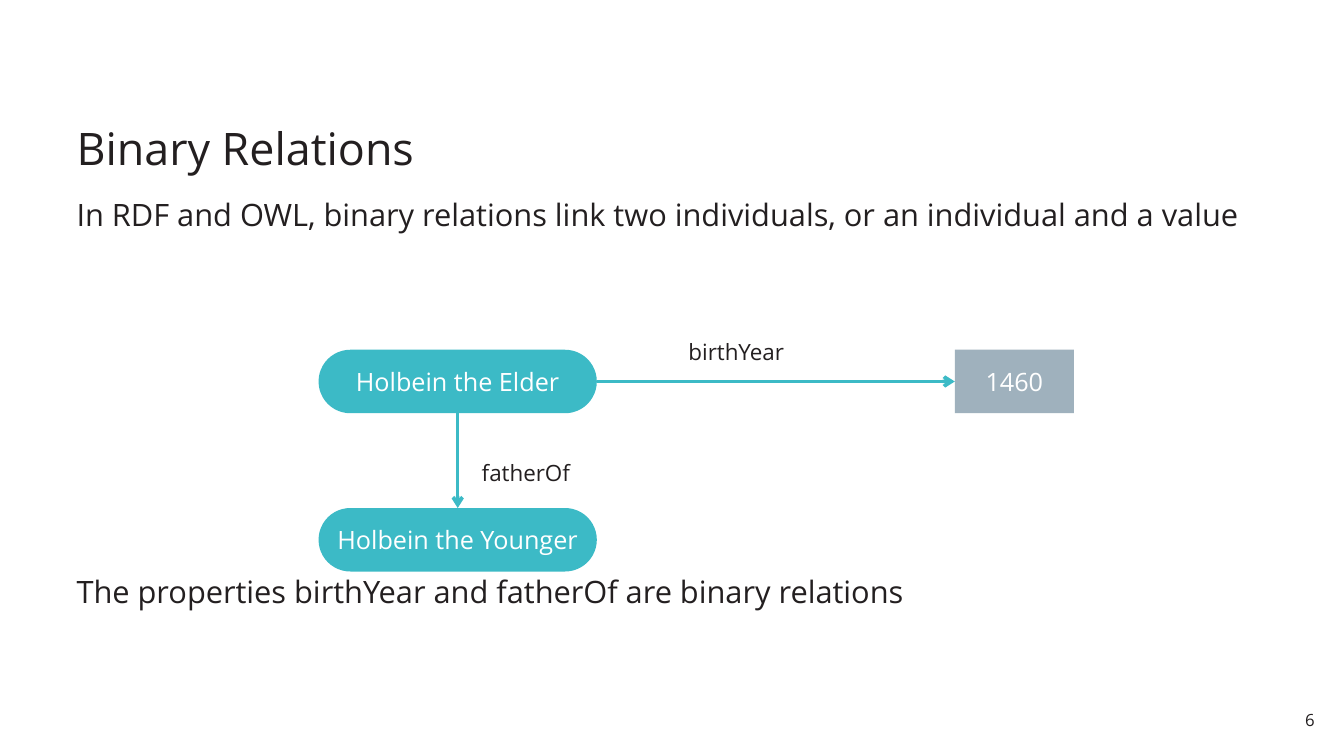
from pptx import Presentation
from pptx.dml.color import RGBColor
from pptx.enum.shapes import MSO_CONNECTOR as Line, MSO_SHAPE as Shape
from pptx.enum.text import MSO_ANCHOR as Anchor, MSO_AUTO_SIZE as Fit, PP_ALIGN as Align
from pptx.oxml.ns import qn
from pptx.util import Inches, Pt
from lxml.etree import SubElement

INK = RGBColor(0x23, 0x1F, 0x20)
TEAL = RGBColor(0x3C, 0xBA, 0xC6)
GRAY = RGBColor(0x9F, 0xB1, 0xBD)
WHITE = RGBColor(0xFF, 0xFF, 0xFF)
FONT = "Open Sans"

LEFT, WIDE = 0.68, 11.97
PROSE = [
    ("Binary Relations", 0.76, 1.02, 32, Anchor.BOTTOM),
    ("In RDF and OWL, binary relations link two individuals, or an individual and a value",
     1.94, 0.5, 22, Anchor.TOP),
    ("The properties birthYear and fatherOf are binary relations",
     5.68, 0.5, 22, Anchor.TOP),
]
HIGH = 0.63
NODES = {
    "elder": ("Holbein the Elder", Shape.ROUNDED_RECTANGLE, 3.16, 3.47, 2.76, TEAL),
    "younger": ("Holbein the Younger", Shape.ROUNDED_RECTANGLE, 3.16, 5.04, 2.76, TEAL),
    "year": ("1460", Shape.RECTANGLE, 9.47, 3.47, 1.18, GRAY),
}
LINKS = [("elder", 2, "younger", 0), ("elder", 3, "year", 1)]
LABELS = [("birthYear", 6.73, 3.31, 1.2), ("fatherOf", 4.68, 4.51, 1.1)]
NUMBER = ("6", 12.65, 6.98, 0.47, 0.31)


def write(shape, text, size, color, align=Align.LEFT, anchor=Anchor.TOP, wrap=True):
    frame = shape.text_frame
    frame.text = text
    frame.word_wrap = wrap
    frame.vertical_anchor = anchor
    par = frame.paragraphs[0]
    par.alignment = align
    font = par.runs[0].font
    font.name, font.size = FONT, Pt(size)
    font.color.rgb = color
    return frame


def add_box(slide, *place):
    return slide.shapes.add_textbox(*map(Inches, place))


def pad(frame, side, edge):
    frame.margin_left = frame.margin_right = Inches(side)
    frame.margin_top = frame.margin_bottom = Inches(edge)


def add_node(slide, text, kind, left, top, wide, fill):
    node = slide.shapes.add_shape(kind, *map(Inches, (left, top, wide, HIGH)))
    if kind == Shape.ROUNDED_RECTANGLE:
        node.adjustments[0] = 0.5
    node.shadow.inherit = False
    node.fill.solid()
    node.fill.fore_color.rgb = fill
    node.line.fill.background()
    write(node, text, 18, WHITE, Align.CENTER, Anchor.MIDDLE, False)
    return node


def add_link(slide, start, out, end, into):
    link = slide.shapes.add_connector(Line.STRAIGHT, 0, 0, 0, 0)
    link.begin_connect(start, out)
    link.end_connect(end, into)
    link.line.color.rgb = TEAL
    link.line.width = Pt(2.5)
    SubElement(link.line._get_or_add_ln(), qn("a:tailEnd"), type="arrow")
    SubElement(link._element.spPr, qn("a:effectLst"))


def main():
    deck = Presentation()
    deck.slide_width, deck.slide_height = Inches(13.33), Inches(7.5)
    slide = deck.slides.add_slide(deck.slide_layouts[6])

    for text, top, high, size, anchor in PROSE:
        box = add_box(slide, LEFT, top, WIDE, high)
        frame = write(box, text, size, INK, anchor=anchor)
        pad(frame, 0.08, 0.04)
        frame.paragraphs[0].line_spacing = 0.9

    nodes = {key: add_node(slide, *node) for key, node in NODES.items()}
    for start, out, end, into in LINKS:
        add_link(slide, nodes[start], out, nodes[end], into)

    for text, left, top, wide in LABELS:
        box = add_box(slide, left, top, wide, 0.37)
        write(box, text, 16, INK, wrap=False).auto_size = Fit.SHAPE_TO_FIT_TEXT

    digit, *place = NUMBER
    pad(write(add_box(slide, *place), digit, 12, INK, Align.RIGHT), 0.08, 0.06)

    deck.save("out.pptx")


if __name__ == "__main__":
    main()
